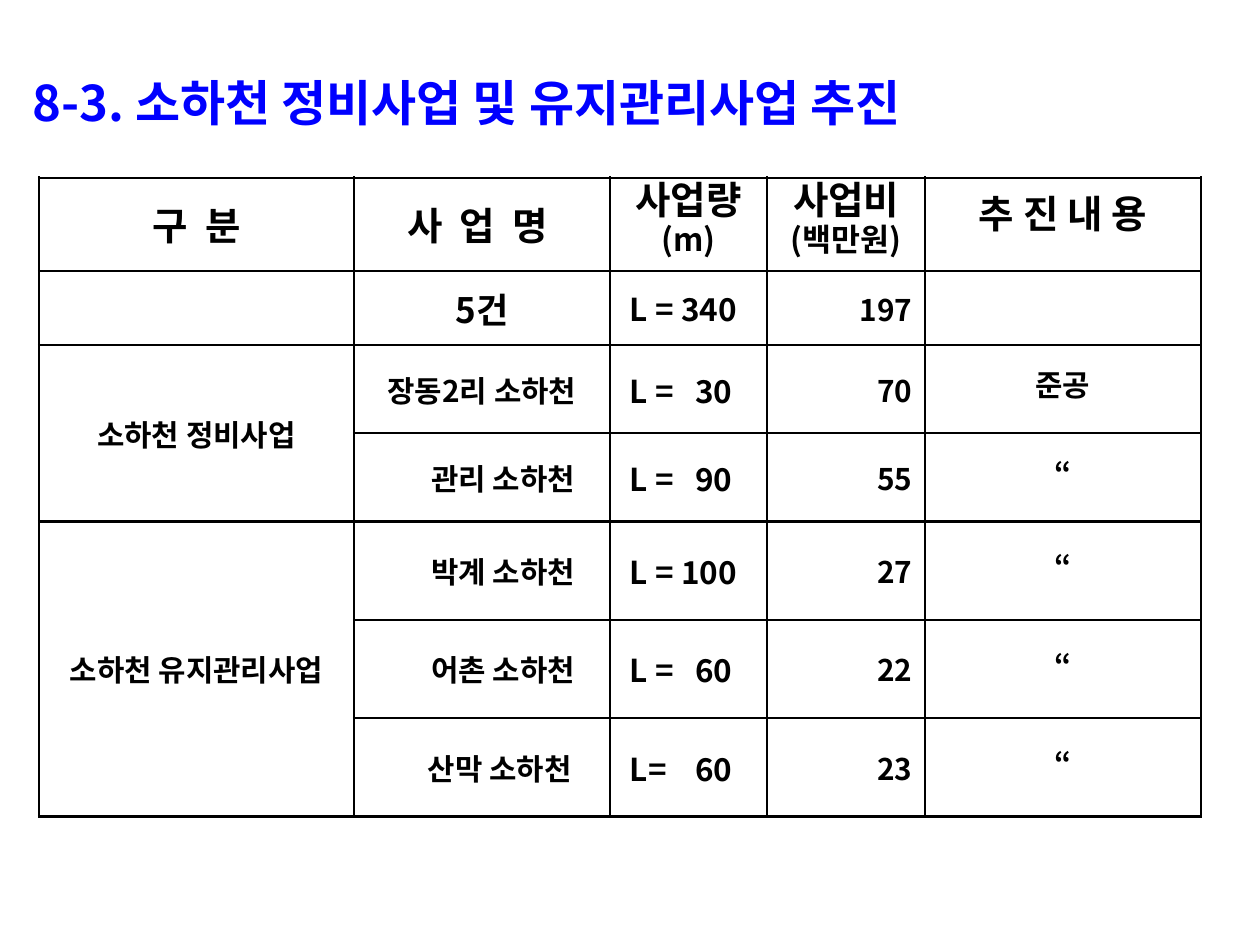
from dataclasses import dataclass

from lxml import etree
from pptx import Presentation
from pptx.dml.color import RGBColor
from pptx.enum.text import MSO_ANCHOR, PP_ALIGN
from pptx.oxml.ns import qn
from pptx.util import Inches, Pt

LEFT, CENTER, RIGHT = PP_ALIGN.LEFT, PP_ALIGN.CENTER, PP_ALIGN.RIGHT
MIDDLE = MSO_ANCHOR.MIDDLE
TITLE_ONLY = 5


@dataclass
class Theme:
    font: str = "Noto Sans CJK KR"
    title_color: str = "0000FF"
    ink: str = "000000"
    title: int = 28
    head: int = 22
    total: int = 20
    amount: int = 18
    body: int = 17
    border: float = 1.5


def write(p, text, theme, size, color=None, align=LEFT, line=None, before=0):
    """Put one formatted run into a paragraph."""
    p.alignment = align
    p.space_before = Pt(before)
    if line:
        p.line_spacing = Pt(line)
    r = p.add_run()
    r.text = text
    r.font.name, r.font.size, r.font.bold = theme.font, Pt(size), True
    r.font.color.rgb = RGBColor.from_string(color or theme.ink)
    ea = etree.SubElement(r.font._element, qn("a:ea"))
    ea.set("typeface", theme.font)


class SlideBuilder:
    def __init__(self, prs, theme):
        self.theme = theme
        self.s = prs.slides.add_slide(prs.slide_layouts[TITLE_ONLY])

    def title(self, text, x, y, w, h):
        sp = self.s.shapes.title
        sp.left, sp.top, sp.width, sp.height = map(Inches, (x, y, w, h))
        tf = sp.text_frame
        tf.vertical_anchor = MIDDLE
        write(tf.paragraphs[0], text, self.theme, self.theme.title,
              color=self.theme.title_color)

    def table(self, x, y, cols, rows):
        frame = self.s.shapes.add_table(
            len(rows), len(cols), Inches(x), Inches(y),
            Inches(sum(cols)), Inches(sum(rows)))
        tbl = frame.table
        tbl.first_row = tbl.horz_banding = False
        for col, w in zip(tbl.columns, cols):
            col.width = Inches(w)
        for row, h in zip(tbl.rows, rows):
            row.height = Inches(h)
        for cell in tbl.iter_cells():
            self.borders(cell)
            cell.fill.background()
            cell.vertical_anchor = MIDDLE
        return tbl

    def borders(self, cell):
        tc_pr = cell._tc.get_or_add_tcPr()
        for side in ("a:lnL", "a:lnR", "a:lnT", "a:lnB"):
            ln = etree.SubElement(tc_pr, qn(side))
            ln.set("w", str(int(Pt(self.theme.border))))
            fill = etree.SubElement(ln, qn("a:solidFill"))
            etree.SubElement(fill, qn("a:srgbClr")).set("val", self.theme.ink)

    def cell(self, cell, text, size, align=CENTER, line=None, indent=0):
        cell.margin_left = Inches(0.1 + indent)
        write(cell.text_frame.paragraphs[0], text, self.theme, size,
              align=align, line=line, before=0.2 * size)

    def unit_head(self, cell, name, unit):
        """Header cell with its unit on a second, smaller line."""
        # Tight line spacing lifts the glyphs, so the top margin is larger
        cell.margin_top = Inches(0.13)
        tf = cell.text_frame
        write(tf.paragraphs[0], name, self.theme, self.theme.head,
              align=CENTER, line=16)
        write(tf.add_paragraph(), unit, self.theme, self.theme.amount,
              align=CENTER, line=16, before=4)


def main():
    prs = Presentation()
    prs.slide_width, prs.slide_height = Inches(10), Inches(7.5)
    theme = Theme()
    b = SlideBuilder(prs, theme)

    b.title("8-3. 소하천 정비사업 및 유지관리사업 추진", 0.16, 0.46, 9.6, 0.7)

    tbl = b.table(0.31, 1.41, [2.5, 2.03, 1.25, 1.25, 2.19],
                  [0.74, 0.59, 0.7, 0.7, 0.78, 0.78, 0.78])

    # Header row
    b.cell(tbl.cell(0, 0), "구  분", theme.head)
    b.cell(tbl.cell(0, 1), "사  업  명", theme.head, indent=-0.07)
    b.unit_head(tbl.cell(0, 2), "사업량", "(m)")
    b.unit_head(tbl.cell(0, 3), "사업비", "(백만원)")
    b.cell(tbl.cell(0, 4), "추 진 내 용", theme.head, line=18)

    # Total and projects: name, name indent, length, cost, progress
    projects = [
        ("5건", 0, "L = 340", "197", ""),
        ("장동2리 소하천", 0, "L =   30", "70", "준공"),
        ("관리 소하천", 0.34, "L =   90", "55", "“"),
        ("박계 소하천", 0.34, "L = 100", "27", "“"),
        ("어촌 소하천", 0.34, "L =   60", "22", "“"),
        ("산막 소하천", 0.28, "L=    60", "23", "“"),
    ]
    for i, (name, indent, length, cost, progress) in enumerate(projects, 1):
        name_size = theme.total if i == 1 else theme.body
        b.cell(tbl.cell(i, 1), name, name_size, indent=indent)
        b.cell(tbl.cell(i, 2), length, theme.amount, align=LEFT, indent=0.06)
        b.cell(tbl.cell(i, 3), cost, theme.body, align=RIGHT)
        if progress:
            b.cell(tbl.cell(i, 4), progress, theme.body, line=18)

    # Categories spanning their projects
    for first, last, name in ((2, 3, "소하천 정비사업"),
                              (4, 6, "소하천 유지관리사업")):
        tbl.cell(first, 0).merge(tbl.cell(last, 0))
        b.cell(tbl.cell(first, 0), name, theme.body)

    prs.save("out.pptx")


if __name__ == "__main__":
    main()
